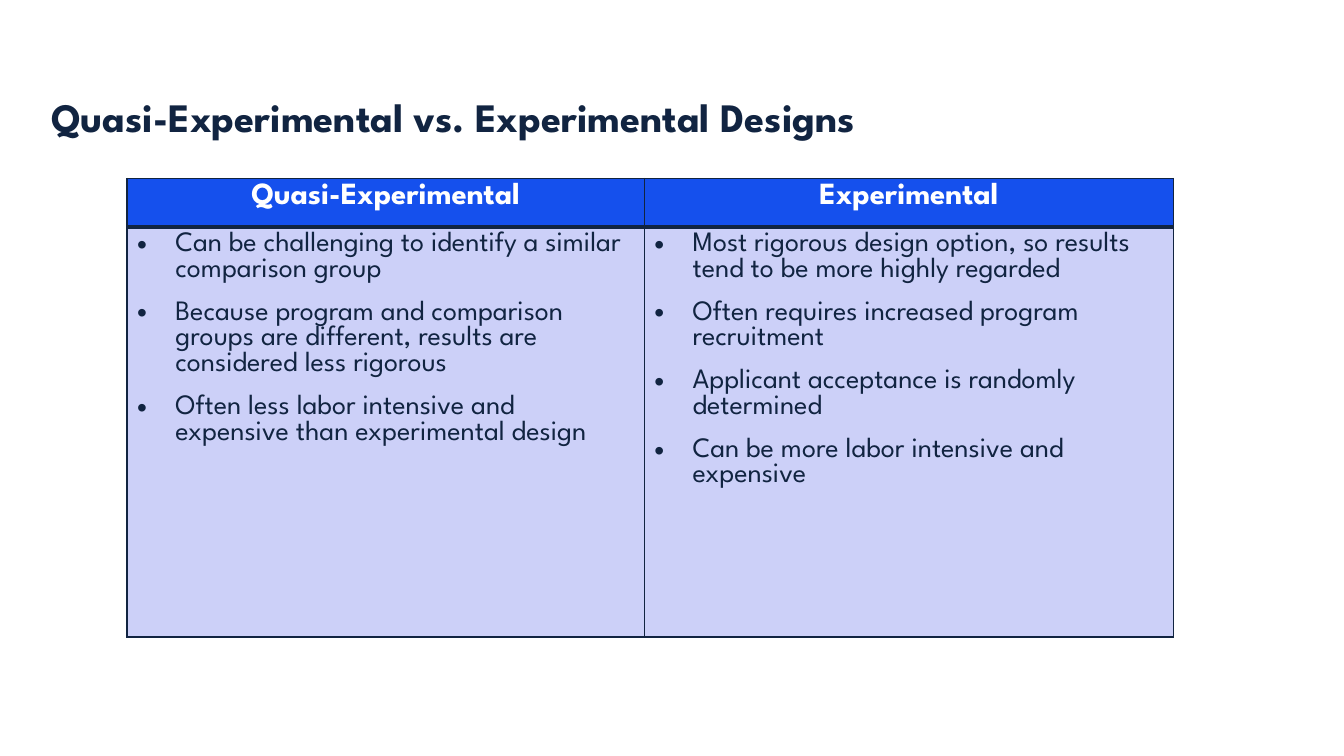
import pptx
import pptx.util
import pptx.dml.color
import pptx.enum.text
import pptx.oxml.ns
import lxml.etree
from dataclasses import dataclass

Inches = pptx.util.Inches
Pt = pptx.util.Pt
qn = pptx.oxml.ns.qn


@dataclass(frozen=True)
class Theme:
    face: str = "League Spartan"
    navy: str = "112441"
    blue: str = "1550ED"
    pale: str = "CCD0F8"
    white: str = "FFFFFF"
    title: float = 28.8
    head: float = 22
    body: float = 20
    thin: float = 1
    thick: float = 3


THEME = Theme()
DESIGNS = {
    "Quasi-Experimental": [
        "Can be challenging to identify a similar comparison group",
        "Because program and comparison groups are different, results are considered less rigorous",
        "Often less labor intensive and expensive than experimental design",
    ],
    "Experimental": [
        "Most rigorous design option, so results tend to be more highly regarded",
        "Often requires increased program recruitment",
        "Applicant acceptance is randomly determined",
        "Can be more labor intensive and expensive",
    ],
}


def color(code):
    return pptx.dml.color.RGBColor.from_string(code)


def write(para, text, size, code, bold):
    run = para.add_run()
    run.text = text
    run.font.name = THEME.face
    run.font.size = Pt(size)
    run.font.bold = bold
    run.font.color.rgb = color(code)


def bullet(para):
    para.level = 1
    para.space_after = Pt(12)
    props = para._p.get_or_add_pPr()
    props.set("marL", str(Inches(0.38)))
    props.set("indent", str(-Inches(0.38)))
    lxml.etree.SubElement(props, qn("a:buFont"), typeface="Arial")
    lxml.etree.SubElement(props, qn("a:buChar"), char="•")


def paint(cell, fill, top, base):
    props = cell._tc.get_or_add_tcPr()
    sides = {"L": THEME.thin, "R": THEME.thin, "T": top, "B": base}
    for side, width in sides.items():
        line = lxml.etree.SubElement(props, qn("a:ln" + side), w=str(Pt(width)))
        solid = lxml.etree.SubElement(line, qn("a:solidFill"))
        lxml.etree.SubElement(solid, qn("a:srgbClr"), val=THEME.navy)
    cell.fill.solid()
    cell.fill.fore_color.rgb = color(fill)


def add_title(slide, left, top, width, height):
    title = slide.shapes.title
    title.left, title.top = Inches(left), Inches(top)
    title.width, title.height = Inches(width), Inches(height)
    frame = title.text_frame
    frame.margin_left = frame.margin_right = 0
    frame.margin_top = frame.margin_bottom = 0
    frame.word_wrap = True
    frame.auto_size = pptx.enum.text.MSO_AUTO_SIZE.NONE
    frame.vertical_anchor = pptx.enum.text.MSO_ANCHOR.BOTTOM
    para = frame.paragraphs[0]
    para.alignment = pptx.enum.text.PP_ALIGN.LEFT
    para.line_spacing = 0.9
    write(para, "Quasi-Experimental vs. Experimental Designs",
          THEME.title, THEME.navy, True)


def add_grid(slide, left, top, width, height):
    table = slide.shapes.add_table(
        2, len(DESIGNS), Inches(left), Inches(top), Inches(width), Inches(height)).table
    first, band = 5.13, 0.48
    table.columns[0].width = Inches(first)
    table.columns[1].width = Inches(width - first)
    table.rows[0].height = Inches(band)
    table.rows[1].height = Inches(height - band)
    for col, (name, points) in enumerate(DESIGNS.items()):
        head, body = table.cell(0, col), table.cell(1, col)
        paint(head, THEME.blue, THEME.thin, THEME.thick)
        paint(body, THEME.pale, THEME.thick, THEME.thin)
        para = head.text_frame.paragraphs[0]
        para.alignment = pptx.enum.text.PP_ALIGN.CENTER
        write(para, name, THEME.head, THEME.white, True)
        frame = body.text_frame
        for spot, point in enumerate(points):
            para = frame.add_paragraph() if spot else frame.paragraphs[0]
            bullet(para)
            write(para, point, THEME.body, THEME.navy, False)


def main():
    deck = pptx.Presentation()
    deck.slide_width, deck.slide_height = Inches(13.33), Inches(7.5)
    slide = deck.slides.add_slide(deck.slide_layouts[5])
    add_title(slide, 0.51, 0.47, 9.45, 0.93)
    add_grid(slide, 1.26, 1.77, 10.38, 4.55)
    deck.save("out.pptx")


if __name__ == "__main__":
    main()
